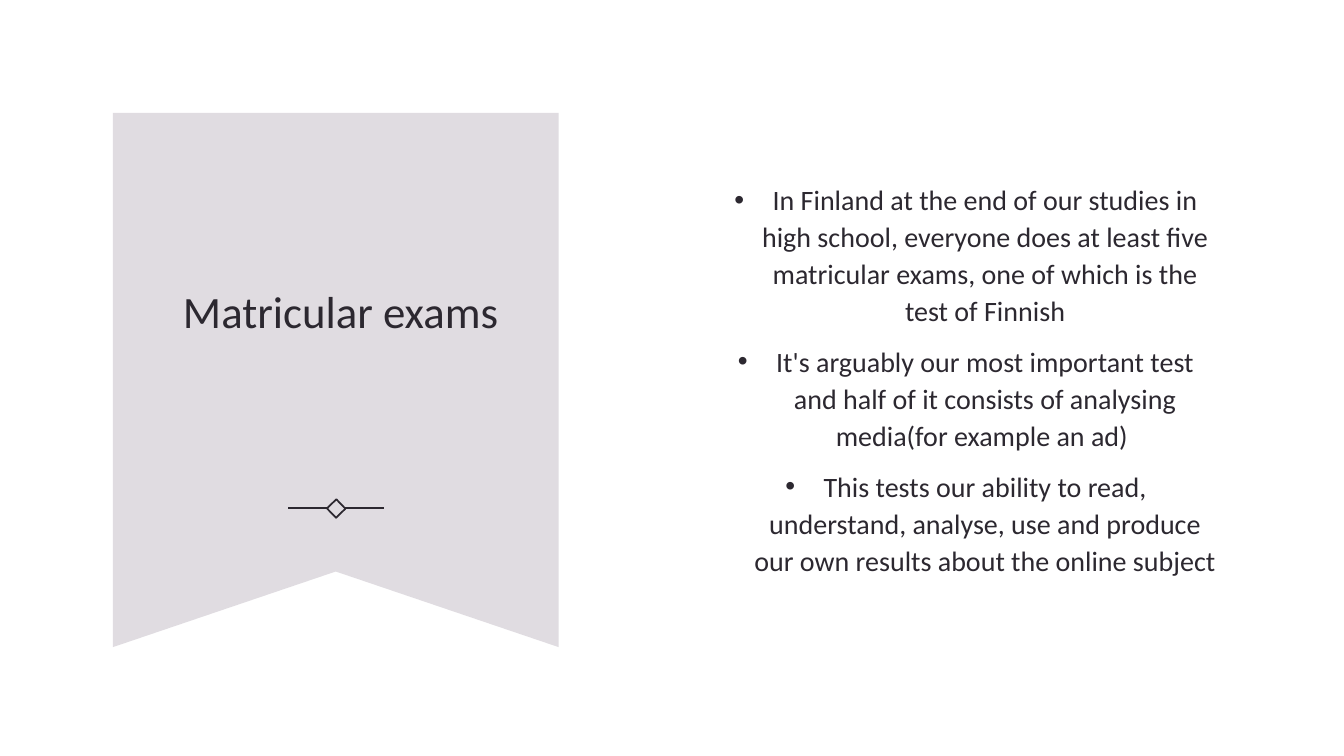
"""Build the slide on matricular exams: a ribbon with the title beside three bullets."""
from dataclasses import dataclass

from lxml.etree import SubElement
from pptx import Presentation
from pptx.dml.color import RGBColor
from pptx.enum.shapes import MSO_CONNECTOR, MSO_SHAPE
from pptx.enum.text import MSO_ANCHOR, MSO_AUTO_SIZE, PP_ALIGN
from pptx.oxml.ns import qn
from pptx.shapes.group import GroupShape
from pptx.slide import Slide
from pptx.text.text import TextFrame, _Paragraph as Paragraph
from pptx.util import Inches, Pt

INK = RGBColor(0x2C, 0x28, 0x30)
LILAC = RGBColor(0xE0, 0xDC, 0xE1)
FONT = "Calibri"
RIBBON = [(1.12, 1.12), (5.54, 1.12), (5.54, 6.42), (3.33, 5.67), (1.12, 6.42)]
POINTS = [
    "In Finland at the end of our studies in high school, everyone does at least five "
    "matricular exams, one of which is the test of Finnish",
    "It's arguably our most important test and half of it consists of analysing "
    "media(for example an ad) ",
    "This tests our ability to read, understand, analyse, use and produce our own "
    "results about the online subject",
]


@dataclass(frozen=True)
class Rule:
    left: float
    right: float
    y: float = 5.04


RULES = [Rule(3.42, 3.81), Rule(2.86, 3.24)]


def draw_ribbon(slide: Slide) -> None:
    corners = [(Inches(x), Inches(y)) for x, y in RIBBON]
    builder = slide.shapes.build_freeform(*corners[0], scale=1.0)
    builder.add_line_segments(corners[1:], close=True)
    ribbon = builder.convert_to_shape()
    ribbon.shadow.inherit = False
    ribbon.fill.solid()
    ribbon.fill.fore_color.rgb = LILAC
    ribbon.line.fill.background()


def draw_rule(ornament: GroupShape, rule: Rule) -> None:
    stroke = ornament.shapes.add_connector(
        MSO_CONNECTOR.STRAIGHT,
        Inches(rule.left), Inches(rule.y), Inches(rule.right), Inches(rule.y),
    )
    stroke.line.color.rgb = INK
    stroke.line.width = Pt(1.25)
    SubElement(stroke.element.spPr, qn("a:effectLst"))


def draw_ornament(slide: Slide) -> None:
    ornament = slide.shapes.add_group_shape()
    diamond = ornament.shapes.add_shape(
        MSO_SHAPE.RECTANGLE, Inches(3.27), Inches(4.98), Inches(0.13), Inches(0.13)
    )
    diamond.rotation = 316
    diamond.shadow.inherit = False
    diamond.fill.background()
    diamond.line.color.rgb = INK
    diamond.line.width = Pt(1.25)
    for rule in RULES:
        draw_rule(ornament, rule)


def prepare(frame: TextFrame) -> None:
    frame.word_wrap = True
    frame.auto_size = MSO_AUTO_SIZE.NONE
    frame.vertical_anchor = MSO_ANCHOR.MIDDLE


def write(paragraph: Paragraph, words: str, size: int) -> None:
    paragraph.alignment = PP_ALIGN.CENTER
    paragraph.line_spacing = 1.1
    run = paragraph.add_run()
    run.text = words
    run.font.name = FONT
    run.font.size = Pt(size)
    run.font.color.rgb = INK


def add_bullet(paragraph: Paragraph) -> None:
    paragraph.space_before = Pt(10)
    properties = paragraph._p.get_or_add_pPr()
    properties.set("marL", str(Inches(0.38)))
    properties.set("indent", str(-Inches(0.38)))
    SubElement(properties, qn("a:buFont"), typeface="Arial")
    SubElement(properties, qn("a:buChar"), char="•")


def place_heading(slide: Slide) -> None:
    heading = slide.shapes.title
    slide.shapes.element.append(heading.element)
    heading.left, heading.top = Inches(1.54), Inches(1.48)
    heading.width, heading.height = Inches(3.68), Inches(3.14)
    prepare(heading.text_frame)
    write(heading.text_frame.paragraphs[0], "Matricular exams", 32)


def list_points(slide: Slide) -> None:
    points = slide.shapes.add_textbox(
        Inches(6.99), Inches(0.79), Inches(5.18), Inches(5.92)
    ).text_frame
    prepare(points)
    for index, point in enumerate(POINTS):
        paragraph = points.add_paragraph() if index else points.paragraphs[0]
        write(paragraph, point, 20)
        add_bullet(paragraph)


def main() -> None:
    deck = Presentation()
    deck.slide_width, deck.slide_height = Inches(13.33), Inches(7.5)
    slide = deck.slides.add_slide(deck.slide_layouts.get_by_name("Title Only"))
    draw_ribbon(slide)
    draw_ornament(slide)
    place_heading(slide)
    list_points(slide)
    deck.save("out.pptx")


if __name__ == "__main__":
    main()
